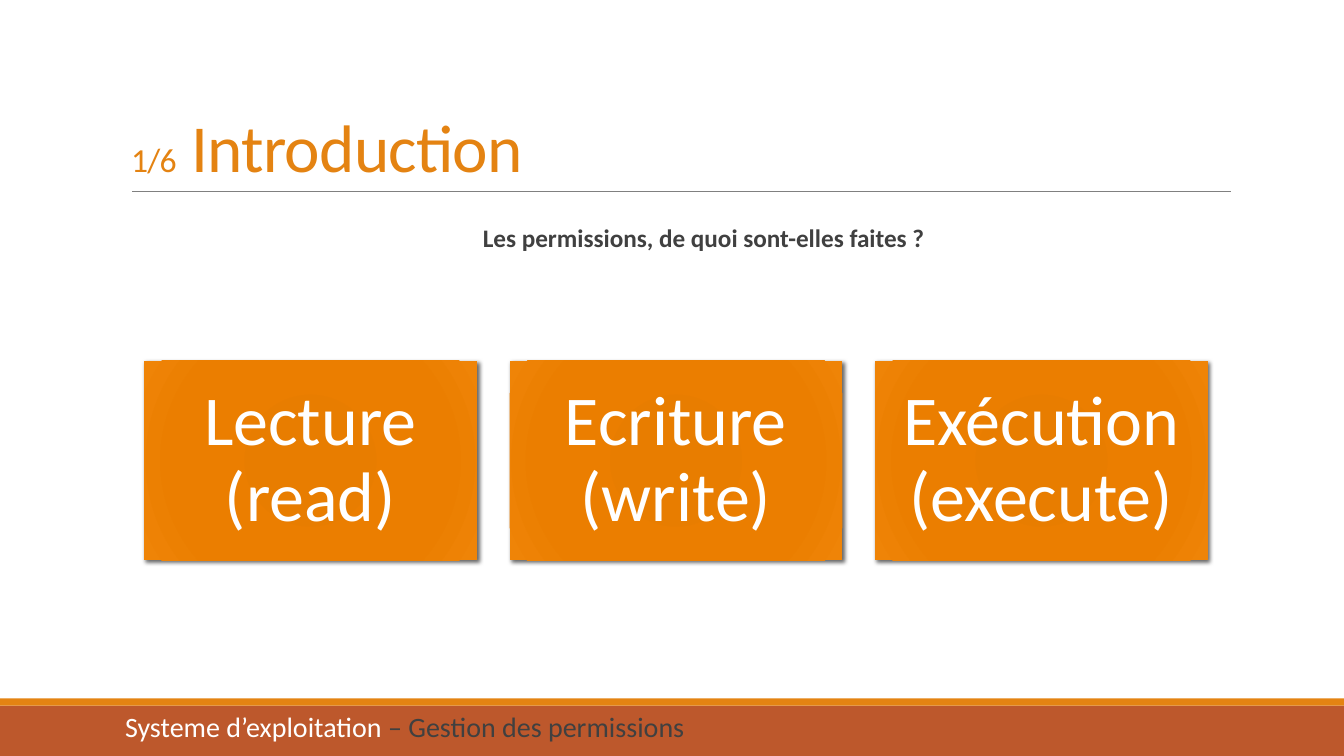
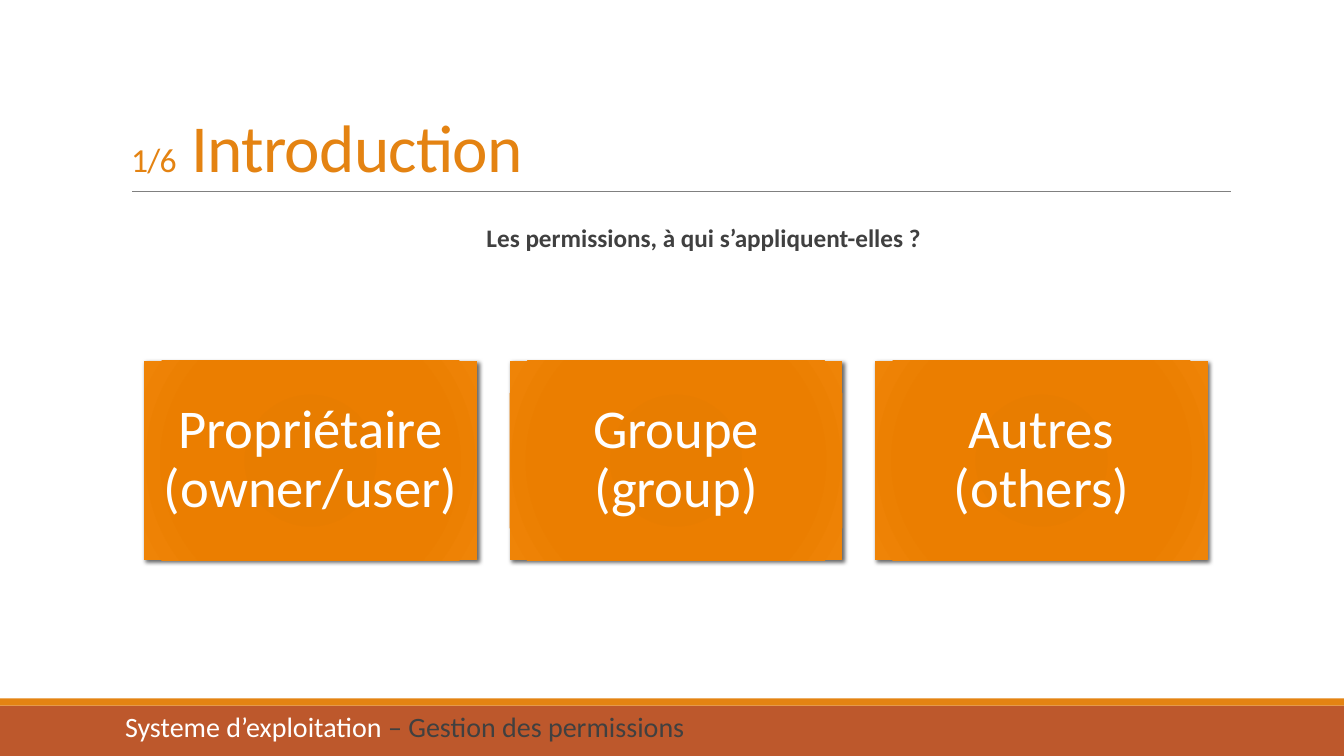
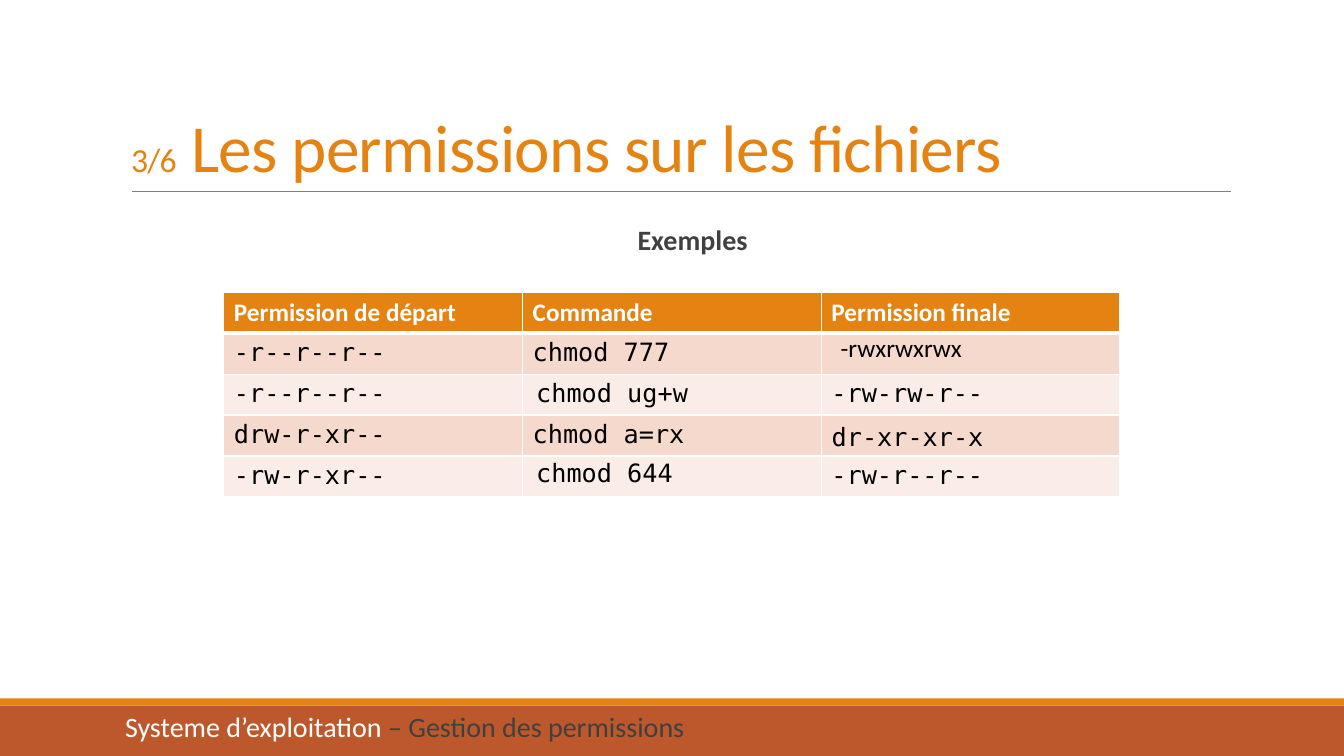
"""Build three slides about file permissions."""
from pptx import Presentation
from pptx.dml.color import RGBColor
from pptx.enum import shapes, text
from pptx.oxml import parse_xml
from pptx.oxml.ns import nsdecls
from pptx.util import Inches, Pt

ORANGE = RGBColor(0xE4, 0x83, 0x12)
RUST = RGBColor(0xBD, 0x58, 0x2C)
GREY = RGBColor(0x80, 0x80, 0x80)
DARK = RGBColor(0x40, 0x40, 0x40)
WHITE = RGBColor(0xFF, 0xFF, 0xFF)
BLACK = RGBColor(0, 0, 0)
ROSE = RGBColor(0xF5, 0xD9, 0xCC)
PALE = RGBColor(0xFA, 0xED, 0xE7)
SANS, MONO = "Calibri", "DejaVu Sans Mono"
NS = nsdecls("a")
STOPS = [(0, "E57B00"), (34, "E87D00"), (70, "EB7E00"), (100, "EF8407")]
GRAD = (
    f'<a:gradFill {NS} rotWithShape="1"><a:gsLst>'
    + "".join(
        f'<a:gs pos="{pos * 1000}"><a:srgbClr val="{tone}"/></a:gs>'
        for pos, tone in STOPS
    )
    + '</a:gsLst><a:path path="circle"><a:fillToRect l="100000" t="100000" '
    'r="100000" b="100000"/></a:path></a:gradFill>'
)
SHADE = (
    f'<a:effectLst {NS}><a:outerShdw blurRad="38100" dist="25400" dir="2700000" '
    'rotWithShape="0"><a:srgbClr val="000000"><a:alpha val="60000"/></a:srgbClr>'
    "</a:outerShdw></a:effectLst>"
)

DECK = [
    ("1/6", "Introduction", "Les permissions, de quoi sont-elles faites ?", 50, 0.21,
     ["Lecture\n(read)", "Ecriture\n(write)", "Exécution\n(execute)"]),
    ("1/6", "Introduction", "Les permissions, à qui s’appliquent-elles ?", 39, 0.16,
     ["Propriétaire\n(owner/user)", "Groupe\n(group)", "Autres\n(others)"]),
    ("3/6", "Les permissions sur les fichiers", "Exemples", 0, 0, []),
]
ROWS = [
    ["Permission de départ", "Commande", "Permission finale"],
    ["-r--r--r--", "chmod 777", ""],
    ["-r--r--r--", "", "-rw-rw-r--"],
    ["drw-r-xr--", "chmod a=rx", ""],
    ["-rw-r-xr--", "", "-rw-r--r--"],
]
NOTES = [
    (8.24, 3.25, 2.28, "-rwxrwxrwx", SANS),
    (5.22, 3.69, 2.56, "chmod ug+w", MONO),
    (8.15, 4.13, 2.59, "dr-xr-xr-x", MONO),
    (5.22, 4.49, 3.2, "chmod 644", MONO),
]


def style(run, size, color, bold=False, face=SANS):
    run.font.size = Pt(size)
    run.font.color.rgb = color
    run.font.bold = bold
    run.font.name = face


def place(item, left, top, width, height):
    item.left, item.top = Inches(left), Inches(top)
    item.width, item.height = Inches(width), Inches(height)


deck = Presentation()
deck.slide_width, deck.slide_height = Inches(13.33), Inches(7.5)

for part, name, lead, size, inset, cards in DECK:
    slide = deck.slides.add_slide(deck.slide_layouts[1])
    title, body = slide.placeholders

    for top, height, color in [(7, 0.5, RUST), (6.93, 0.07, ORANGE)]:
        band = slide.shapes.add_shape(
            shapes.MSO_SHAPE.RECTANGLE, 0, Inches(top), deck.slide_width, Inches(height))
        band.shadow.inherit = False
        band.fill.solid()
        band.fill.fore_color.rgb = color
        band.line.fill.background()

    rule = slide.shapes.add_connector(
        shapes.MSO_CONNECTOR.STRAIGHT, Inches(1.31), Inches(1.9), Inches(12.21), Inches(1.9))
    rule.line.color.rgb = GREY
    rule.line.width = Pt(0.5)
    rule._element.spPr.append(parse_xml(f"<a:effectLst {NS}/>"))

    place(title, 1.2, 0.31, 11, 1.59)
    frame = title.text_frame
    frame.auto_size = text.MSO_AUTO_SIZE.NONE
    frame.vertical_anchor = text.MSO_ANCHOR.BOTTOM
    para = frame.paragraphs[0]
    para.alignment = text.PP_ALIGN.LEFT
    para.line_spacing = 0.85
    for words, points in [(part, 24), (" " + name, 48)]:
        run = para.add_run()
        run.text = words
        style(run, points, ORANGE)
        run.font._element.set("spc", "-50")

    place(body, 1.37, 2.19, 11, 4.4 if cards else 0.96)
    frame = body.text_frame
    frame.auto_size = text.MSO_AUTO_SIZE.NONE
    frame.margin_left = frame.margin_right = 0
    frame.text = lead
    para = frame.paragraphs[0]
    para.level = 1 if cards else 0
    para.alignment = text.PP_ALIGN.CENTER
    para.line_spacing = 0.9
    para.space_before, para.space_after = (Pt(2), Pt(4)) if cards else (Pt(12), Pt(2))
    props = para._p.get_or_add_pPr()
    props.set("marL", str(Inches(0.22 if cards else 0)))
    props.set("indent", "0")
    props.append(parse_xml(f"<a:buNone {NS}/>"))
    style(para.runs[0], 18 if cards else 20, DARK, True)

    for col, words in enumerate(cards):
        card = slide.shapes.add_shape(
            shapes.MSO_SHAPE.RECTANGLE, Inches(1.43 + col * 3.625), Inches(3.58),
            Inches(3.3), Inches(1.98))
        card.line.fill.background()
        card._element.spPr.insert(2, parse_xml(GRAD))
        card._element.spPr.append(parse_xml(SHADE))
        frame = card.text_frame
        frame.word_wrap = True
        frame.vertical_anchor = text.MSO_ANCHOR.MIDDLE
        frame.margin_left = frame.margin_right = Inches(inset)
        frame.margin_top = frame.margin_bottom = Inches(inset)
        para = frame.paragraphs[0]
        para.text = words
        para.alignment = text.PP_ALIGN.CENTER
        para.line_spacing = 0.9
        for run in para.runs:
            style(run, size, WHITE)

    foot = slide.shapes.add_textbox(Inches(1.24), Inches(7.03), Inches(6.7), Inches(0.45))
    frame = foot.text_frame
    frame.word_wrap = True
    frame.margin_left = frame.margin_right = 0
    para = frame.paragraphs[0]
    para.line_spacing = 0.9
    for words, color in [("Systeme d’exploitation ", WHITE),
                         ("– Gestion des permissions", DARK)]:
        run = para.add_run()
        run.text = words
        style(run, 20, color)

grid = slide.shapes.add_table(
    5, 3, Inches(2.22), Inches(2.9), Inches(8.89), Inches(2.03)).table
for row, line in enumerate(ROWS):
    for col, words in enumerate(line):
        cell = grid.cell(row, col)
        cell.fill.solid()
        cell.fill.fore_color.rgb = ORANGE if row == 0 else ROSE if row % 2 else PALE
        thick = {0: "B", 1: "T"}.get(row)
        for order, side in enumerate("LRTB"):
            width = Pt(3 if side == thick else 1)
            cell._tc.get_or_add_tcPr().insert(order, parse_xml(
                f'<a:ln{side} {NS} w="{width}"><a:solidFill>'
                f'<a:srgbClr val="{WHITE}"/></a:solidFill></a:ln{side}>'))
        cell.text_frame.text = words
        for run in cell.text_frame.paragraphs[0].runs:
            if row == 0:
                style(run, 18, WHITE, True)
            else:
                style(run, 18, BLACK, face=MONO)

for left, top, width, words, face in NOTES:
    note = slide.shapes.add_textbox(Inches(left), Inches(top), Inches(width), Inches(0.4))
    note.text_frame.word_wrap = True
    note.text_frame.text = words
    style(note.text_frame.paragraphs[0].runs[0], 18, BLACK, face=face)

deck.save("out.pptx")
